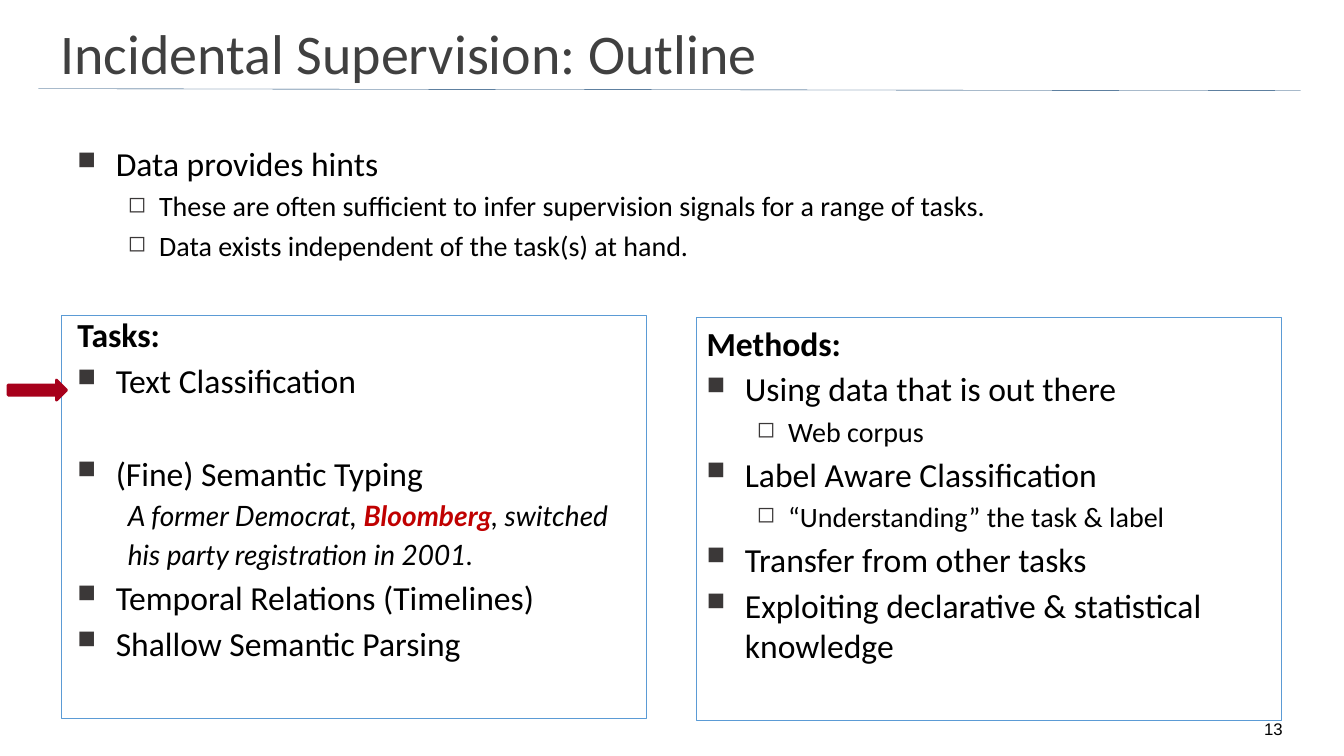
from dataclasses import dataclass

from lxml import etree
from pptx import Presentation
from pptx import util as u
from pptx.dml.color import RGBColor
from pptx.enum import shapes, text
from pptx.oxml import ns

PX = 9144


@dataclass(frozen=True)
class Theme:
    """Colours, fonts and type sizes of the slide."""
    ink: str = "000000"
    title: str = "404040"
    rule: str = "093D6E"
    mark: str = "3B3838"
    frame: str = "5B9BD5"
    arrow: str = "A7001B"
    accent: str = "C00000"
    main: str = "Calibri"
    quote: str = "Lato"
    plain: str = "Arial"
    huge: int = 40
    big: int = 24
    mid: int = 20
    small: int = 12
    gap: int = 4
    skip: float = 37.3


T = Theme()

# kind: left px, hanging px, bullet, bullet size, type size, font, bold, italic
KINDS = {
    "head": (0, 0, None, 0, T.big, T.main, True, False),
    "item": (38, -38, "■", 75, T.big, T.main, False, False),
    "sub": (81, -31, "◻", 80, T.mid, T.main, False, False),
    "quote": (50, 0, None, 0, T.mid, T.quote, False, True),
}

TASKS = [
    ("item", "Data provides hints"),
    ("sub", "These are often sufficient to infer supervision signals "
            "for a range of tasks."),
    ("sub", "Data exists independent of the task(s) at hand."),
    ("head", "Tasks:", T.skip),
    ("item", "Text Classification"),
    ("item", "(Fine) Semantic Typing", T.skip),
    ("quote", ["A former Democrat, ", "Bloomberg", ", switched"]),
    ("quote", "his party registration in 2001."),
    ("item", "Temporal Relations (Timelines)"),
    ("item", "Shallow Semantic Parsing"),
]

METHODS = [
    ("head", "Methods:"),
    ("item", "Using data that is out there"),
    ("sub", "Web corpus"),
    ("item", "Label Aware Classification"),
    ("sub", "“Understanding” the task & label"),
    ("item", "Transfer from other tasks"),
    ("item", "Exploiting declarative & statistical knowledge"),
]


def px(*vals):
    """Turn px lengths into EMU."""
    return [u.Emu(v * PX) for v in vals]


def rgb(code):
    """Make a colour from its hex code."""
    return RGBColor.from_string(code)


def style(font, name, size, color, bold=False, italic=False):
    """Set every trait of a font."""
    font.name, font.size = name, u.Pt(size)
    font.bold, font.italic = bold, italic
    font.color.rgb = rgb(color)


def bullet(para, left, hang, char, scale):
    """Give a paragraph its indent and bullet."""
    props = para._p.get_or_add_pPr()
    props.set("marL", str(left * PX))
    props.set("indent", str(hang * PX))
    if not char:
        etree.SubElement(props, ns.qn("a:buNone"))
        return
    color = etree.SubElement(props, ns.qn("a:buClr"))
    etree.SubElement(color, ns.qn("a:srgbClr"), val=T.mark)
    etree.SubElement(props, ns.qn("a:buSzPct"), val=str(scale * 1000))
    etree.SubElement(props, ns.qn("a:buChar"), char=char)


def fill(frame, rows):
    """Write an outline of rows into a text frame."""
    frame.word_wrap = True
    frame.vertical_anchor = text.MSO_ANCHOR.TOP
    for i, (kind, words, *gap) in enumerate(rows):
        para = frame.paragraphs[0] if i == 0 else frame.add_paragraph()
        left, hang, char, scale, size, name, bold, italic = KINDS[kind]
        para.alignment = text.PP_ALIGN.LEFT
        para.space_before = u.Pt(gap[0] if gap else T.gap if i else 0)
        bullet(para, left, hang, char, scale)
        if isinstance(words, str):
            para.text = words
            style(para.font, name, size, T.ink, bold, italic)
            continue
        for j, part in enumerate(words):
            run = para.add_run()
            run.text = part
            key = j == 1
            style(run.font, name, size, T.accent if key else T.ink,
                  key, italic)


def label(slide, area, words, name, size, color, align, anchor):
    """Add a text box of one line."""
    frame = slide.shapes.add_textbox(*px(*area)).text_frame
    frame.word_wrap = True
    frame.vertical_anchor = anchor
    para = frame.paragraphs[0]
    para.text, para.alignment = words, align
    style(para.font, name, size, color)


def block(slide, kind, area, line, width, inside=None):
    """Add a preset shape with a line and an optional fill."""
    shape = slide.shapes.add_shape(kind, *px(*area))
    shape.shadow.inherit = False
    if inside:
        shape.fill.solid()
        shape.fill.fore_color.rgb = rgb(inside)
    else:
        shape.fill.background()
    shape.line.color.rgb = rgb(line)
    shape.line.width = u.Pt(width)
    return shape


def rule(slide, ends):
    """Add the thin line under the title."""
    line = slide.shapes.add_connector(shapes.MSO_CONNECTOR.STRAIGHT, *px(*ends))
    line.line.color.rgb = rgb(T.rule)
    line.line.width = u.Pt(0.25)
    etree.SubElement(line._element.spPr, ns.qn("a:effectLst"))


def main():
    """Build the slide and save it."""
    deck = Presentation()
    deck.slide_width, deck.slide_height = px(1333, 750)
    slide = deck.slides.add_slide(deck.slide_layouts[6])
    rect = shapes.MSO_SHAPE.RECTANGLE

    rule(slide, (38, 88, 1290, 90))
    label(slide, (50, 23, 1081, 58), "Incidental Supervision: Outline",
          T.main, T.huge, T.title, text.PP_ALIGN.LEFT, text.MSO_ANCHOR.MIDDLE)
    body = slide.shapes.add_textbox(*px(67, 137, 1200, 490))
    fill(body.text_frame, TASKS)
    label(slide, (1235, 713, 56, 25), "13", T.plain, T.small, T.ink,
          text.PP_ALIGN.CENTER, text.MSO_ANCHOR.BOTTOM)
    card = block(slide, rect, (691, 315, 580, 400), T.frame, 1)
    fill(card.text_frame, METHODS)
    block(slide, rect, (61, 313, 580, 400), T.frame, 1)
    block(slide, shapes.MSO_SHAPE.RIGHT_ARROW, (8, 377, 58, 20),
          T.arrow, 2, T.arrow)
    deck.save("out.pptx")


if __name__ == "__main__":
    main()
